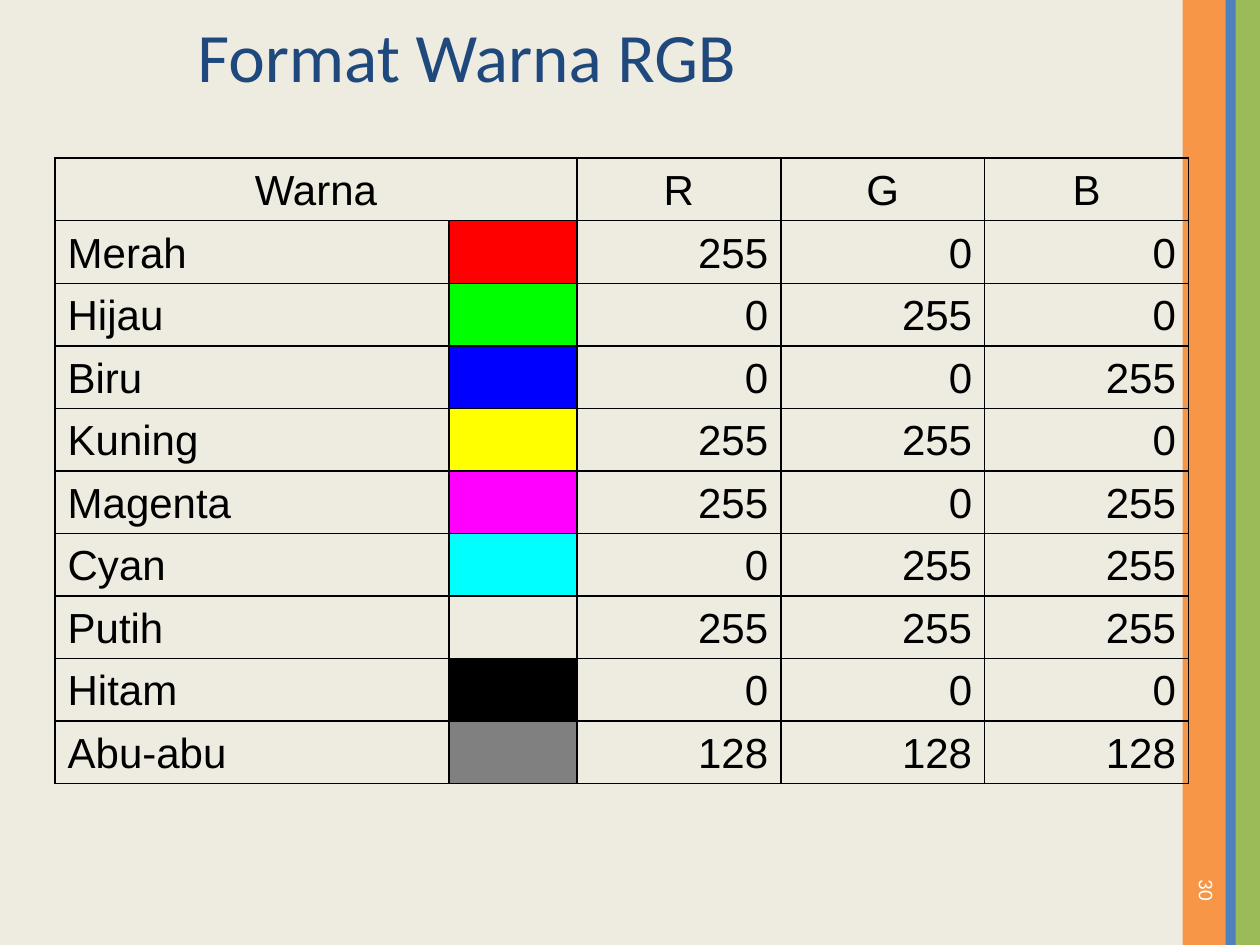
from lxml.etree import SubElement
from pptx import Presentation
from pptx.dml.color import RGBColor
from pptx.enum.shapes import MSO_SHAPE
from pptx.enum.text import MSO_ANCHOR, PP_ALIGN
from pptx.oxml.ns import qn
from pptx.util import Cm, Pt

COLORS = {
    "background": "EEECE1", "title": "1F497D", "text": "000000",
    "border": "000000", "number": "FFFFFF",
    "orange": "F79646", "green": "9BBB59", "blue": "4F81BD",
}
TITLE = "Format Warna RGB"
SLIDE_NUMBER = "30"
HEADER = ["Warna", "", "R", "G", "B"]
ROWS = [  # name, RGB values
    ("Merah", (255, 0, 0)),
    ("Hijau", (0, 255, 0)),
    ("Biru", (0, 0, 255)),
    ("Kuning", (255, 255, 0)),
    ("Magenta", (255, 0, 255)),
    ("Cyan", (0, 255, 255)),
    ("Putih", (255, 255, 255)),
    ("Hitam", (0, 0, 0)),
    ("Abu-abu", (128, 128, 128)),
]
UNFILLED = "Putih"
BARS = [("orange", 23.84, 0.89), ("green", 24.9, 0.5), ("blue", 24.71, 0.2)]  # left, width
COL_WIDTHS = [7.94, 2.58, 4.11, 4.11, 4.11]
ROW_HEIGHT = 1.26


def rgb(name):
    return RGBColor.from_string(COLORS[name])


def write(tf, text, font, size, color, align):
    p = tf.paragraphs[0]
    p.text = text
    p.alignment = align
    p.font.name = font
    p.font.size = Pt(size)
    p.font.color.rgb = rgb(color)


def add_borders(cell):
    tcPr = cell._tc.get_or_add_tcPr()
    for side in ("lnL", "lnR", "lnT", "lnB"):
        ln = SubElement(tcPr, qn(f"a:{side}"), w=str(Pt(1)))
        fill = SubElement(ln, qn("a:solidFill"))
        SubElement(fill, qn("a:srgbClr"), val=COLORS["border"])


def add_bars(s, height):
    for color, left, width in BARS:
        sp = s.shapes.add_shape(MSO_SHAPE.RECTANGLE, Cm(left), 0, Cm(width), height)
        sp.shadow.inherit = False
        sp.fill.solid()
        sp.fill.fore_color.rgb = rgb(color)
        sp.line.fill.background()


def add_title(s):
    title = s.shapes.title
    title.left, title.top, title.width, title.height = Cm(0.2), Cm(0.43), Cm(18.42), Cm(1.35)
    title.text_frame.vertical_anchor = MSO_ANCHOR.MIDDLE
    write(title.text_frame, TITLE, "Calibri", 39.6, "title", PP_ALIGN.CENTER)


def add_color_table(s):
    grid = [HEADER] + [[name, ""] + [str(v) for v in values] for name, values in ROWS]
    table = s.shapes.add_table(len(grid), len(HEADER), Cm(1.11), Cm(3.19),
                               Cm(sum(COL_WIDTHS)), Cm(ROW_HEIGHT * len(grid))).table
    table.first_row = table.horz_banding = False
    for col, width in zip(table.columns, COL_WIDTHS):
        col.width = Cm(width)
    for i, texts in enumerate(grid):
        table.rows[i].height = Cm(ROW_HEIGHT)
        for j, text in enumerate(texts):
            cell = table.cell(i, j)
            add_borders(cell)
            cell.fill.background()
            cell.vertical_anchor = MSO_ANCHOR.BOTTOM
            if text:
                align = (PP_ALIGN.CENTER if i == 0 else
                         PP_ALIGN.LEFT if j == 0 else PP_ALIGN.RIGHT)
                write(cell.text_frame, text, "Arial", 24, "text", align)
    table.cell(0, 0).merge(table.cell(0, 1))
    for i, (name, values) in enumerate(ROWS, 1):
        if name != UNFILLED:
            swatch = table.cell(i, 1)
            swatch.fill.solid()
            swatch.fill.fore_color.rgb = RGBColor(*values)


def add_slide_number(s):
    box = s.shapes.add_textbox(Cm(22.99), Cm(16.56), Cm(2.69), Cm(1.02))
    box.rotation = 90
    tf = box.text_frame
    tf.word_wrap = True
    tf.vertical_anchor = MSO_ANCHOR.MIDDLE
    write(tf, SLIDE_NUMBER, "Calibri", 12, "number", PP_ALIGN.RIGHT)


def main():
    prs = Presentation()
    prs.slide_width, prs.slide_height = Cm(25.4), Cm(19.05)
    s = prs.slides.add_slide(prs.slide_layouts[5])
    s.background.fill.solid()
    s.background.fill.fore_color.rgb = rgb("background")
    add_bars(s, prs.slide_height)
    add_title(s)
    add_color_table(s)
    add_slide_number(s)
    prs.save("out.pptx")


if __name__ == "__main__":
    main()
